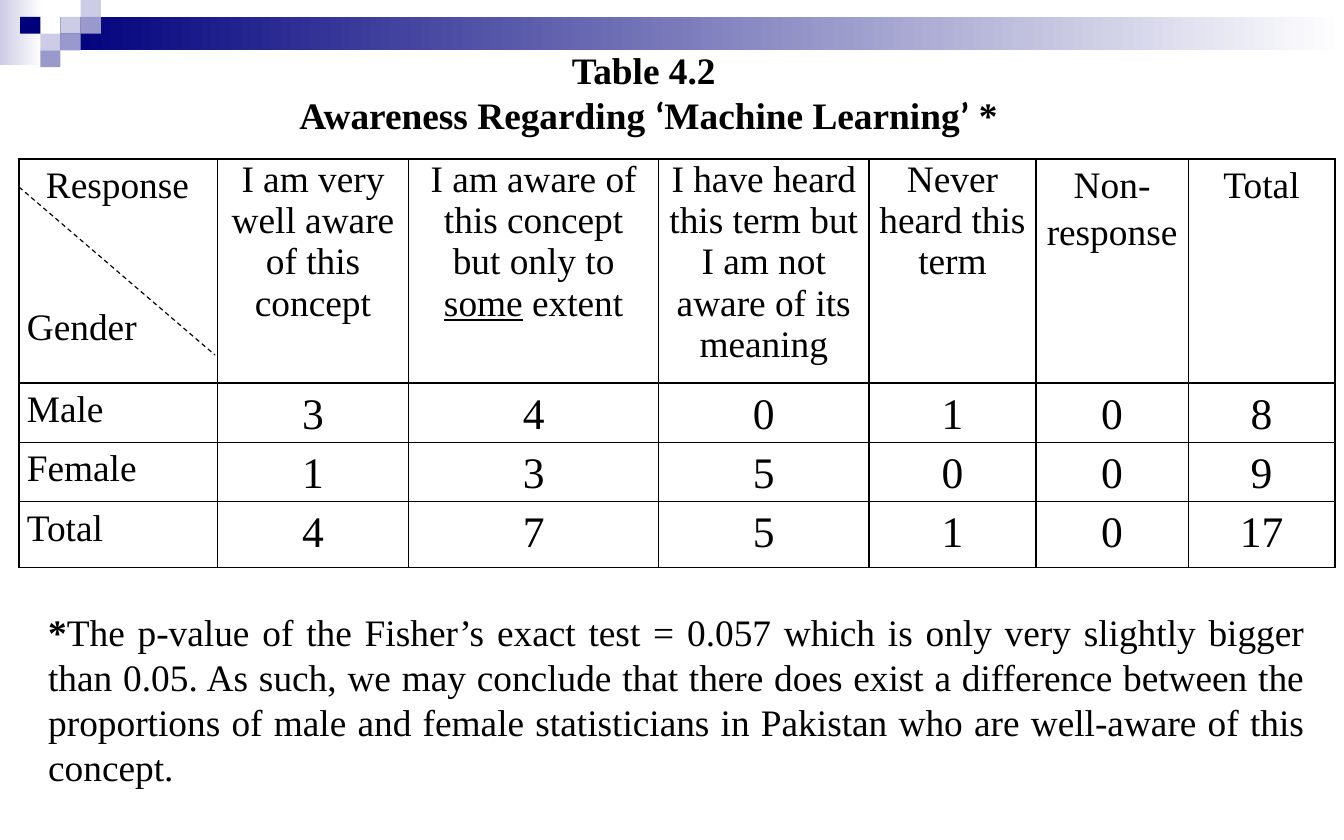
from dataclasses import dataclass, field

from lxml.etree import SubElement
from pptx import Presentation
from pptx.dml.color import RGBColor
from pptx.enum.dml import MSO_LINE
from pptx.enum.shapes import MSO_CONNECTOR, MSO_SHAPE
from pptx.enum.text import MSO_ANCHOR, MSO_AUTO_SIZE, PP_ALIGN
from pptx.oxml.ns import qn
from pptx.util import Inches, Pt

COLORS = {"ink": "000000", "navy": "00007D", "mid": "9999CC", "pale": "CCCCE6", "white": "FFFFFF"}
SERIF, SANS = "Times New Roman", "Calibri"
WIDTH, HEIGHT = 12, 7.5
COL, ROW = 0.18, 0.15
LEFT, TOP = 0.17, 1.42
COL_WIDTHS = [1.77, 1.71, 2.23, 1.88, 1.49, 1.36, 1.31]
ROW_HEIGHTS = [2, 0.53, 0.53, 0.59]
LOOSE = 1.15


@dataclass
class Block:
    col: float
    row: float
    cols: float
    rows: float
    color: str
    fade: bool = False


@dataclass
class Run:
    text: str
    font: dict = field(default_factory=dict)


@dataclass
class Para:
    runs: list[Run]
    fmt: dict = field(default_factory=dict)
    size: int = 24
    indent: float = 0


BLOCKS = [
    Block(0, 0, 2.1, 3.9, "pale", True),
    Block(3, 1, WIDTH / COL - 3, 2, "navy", True),
    Block(3, 1, 1, 1, "pale"),
    Block(4, 0, 1, 1, "pale"),
    Block(4, 1, 1, 1, "mid"),
    Block(2, 2, 1, 1, "pale"),
    Block(1, 1, 1, 1, "navy"),
    Block(3, 2, 1, 1, "mid"),
    Block(2, 3, 1, 1, "mid"),
]
CENTER = {"alignment": PP_ALIGN.CENTER}
CENTER_LOOSE = CENTER | {"line_spacing": LOOSE}
JUSTIFY = {"alignment": PP_ALIGN.JUSTIFY}
BOLD = {"bold": True}
HEADERS = [
    ([Run("I am very well aware of this concept")], CENTER),
    ([Run("I am aware of this concept but only to "), Run("some", {"underline": True}),
      Run(" extent")], CENTER),
    ([Run("I have heard this term but I am not aware of its meaning")], CENTER),
    ([Run("Never heard this term")], CENTER),
    ([Run("Non-response")], CENTER_LOOSE),
    ([Run("Total")], CENTER_LOOSE),
]
COUNTS = {
    "Male": [3, 4, 0, 1, 0, 8],
    "Female": [1, 3, 5, 0, 0, 9],
    "Total": [4, 7, 5, 1, 0, 17],
}


def rgb(name: str) -> RGBColor:
    return RGBColor.from_string(COLORS[name])


def apply(target, values: dict) -> None:
    for name, value in values.items():
        setattr(target, name, value)


def write(tf, paras: list[Para]) -> None:
    for i, para in enumerate(paras):
        p = tf.add_paragraph() if i else tf.paragraphs[0]
        base = {"space_before": Pt(0), "space_after": Pt(0), "line_spacing": 1.0}
        apply(p, base | para.fmt)
        pPr = p._p.get_or_add_pPr()
        pPr.set("marL", str(Inches(para.indent)))
        pPr.set("indent", "0")
        SubElement(pPr, qn("a:buNone"))
        for run in para.runs:
            r = p.add_run()
            r.text = run.text
            apply(r.font, {"name": SERIF, "size": Pt(para.size), "bold": False} | run.font)
            r.font.color.rgb = rgb("ink")


def place(sp, left: float, top: float, width: float, height: float) -> None:
    apply(sp, {"left": Inches(left), "top": Inches(top),
               "width": Inches(width), "height": Inches(height)})


def add_block(s, block: Block) -> None:
    sp = s.shapes.add_shape(MSO_SHAPE.RECTANGLE, Inches(block.col * COL), Inches(block.row * ROW),
                            Inches(block.cols * COL), Inches(block.rows * ROW))
    sp.shadow.inherit = False
    sp.line.fill.background()
    if block.fade:
        sp.fill.gradient()
        sp.fill.gradient_angle = 0
        for stop, color in zip(sp.fill.gradient_stops, (block.color, "white")):
            stop.color.rgb = rgb(color)
    else:
        sp.fill.solid()
        sp.fill.fore_color.rgb = rgb(block.color)
    s.shapes.title.element.addprevious(sp.element)


def fill_cell(cell, paras: list[Para]) -> None:
    apply(cell, {"margin_left": Inches(0.07), "margin_right": Inches(0.07),
                 "margin_top": 0, "margin_bottom": 0})
    write(cell.text_frame, paras)
    tcPr = cell._tc.get_or_add_tcPr()
    for side in ("lnL", "lnR", "lnT", "lnB"):
        ln = SubElement(tcPr, qn(f"a:{side}"), w=str(Pt(1)))
        SubElement(SubElement(ln, qn("a:solidFill")), qn("a:srgbClr"), val=COLORS["ink"])
    cell.fill.background()


def add_counts(s) -> None:
    frame = s.shapes.add_table(len(ROW_HEIGHTS), len(COL_WIDTHS), Inches(LEFT), Inches(TOP),
                               Inches(sum(COL_WIDTHS)), Inches(sum(ROW_HEIGHTS)))
    table = frame.table
    apply(table, {"first_row": False, "horz_banding": False})
    for column, width in zip(table.columns, COL_WIDTHS):
        column.width = Inches(width)
    for row, height in zip(table.rows, ROW_HEIGHTS):
        row.height = Inches(height)
    loose = {"line_spacing": LOOSE}
    fill_cell(table.cell(0, 0), [
        Para([Run("Response")], loose, indent=0.17),
        Para([Run("Gender")], loose | {"space_before": Pt(61)}),
    ])
    for c, (runs, fmt) in enumerate(HEADERS, 1):
        fill_cell(table.cell(0, c), [Para(runs, fmt)])
    for r, (label, values) in enumerate(COUNTS.items(), 1):
        fill_cell(table.cell(r, 0), [Para([Run(label)], JUSTIFY | loose)])
        for c, value in enumerate(values, 1):
            fill_cell(table.cell(r, c), [Para([Run(str(value))], CENTER_LOOSE, 28)])


def add_diagonal(s) -> None:
    line = s.shapes.add_connector(MSO_CONNECTOR.STRAIGHT, Inches(LEFT), Inches(TOP + 0.25),
                                  Inches(LEFT + 1.75), Inches(TOP + 1.75))
    line.line.color.rgb = rgb("ink")
    apply(line.line, {"width": Pt(0.75), "dash_style": MSO_LINE.DASH})
    SubElement(line.element.spPr, qn("a:effectLst"))


def main() -> None:
    prs = Presentation()
    apply(prs, {"slide_width": Inches(WIDTH), "slide_height": Inches(HEIGHT)})
    s = prs.slides.add_slide(prs.slide_layouts[1])
    title, note = s.shapes.title, s.placeholders[1]
    for block in BLOCKS:
        add_block(s, block)

    frame = {"auto_size": MSO_AUTO_SIZE.NONE, "word_wrap": True}
    place(title, 2.33, 0.33, 6.92, 1.51)
    apply(title.text_frame, frame | {"vertical_anchor": MSO_ANCHOR.MIDDLE,
                                     "margin_bottom": Inches(0.58)})
    quote = BOLD | {"name": SANS}
    write(title.text_frame, [
        Para([Run("Table 4.2 ", BOLD)], CENTER),
        Para([Run("Awareness Regarding ", BOLD), Run("‘", quote), Run("Machine Learning", BOLD),
              Run("’", quote), Run(" *", BOLD)], CENTER),
    ])

    place(note, 0.33, 5.39, 11.42, 2.11)
    apply(note.text_frame, frame | {"vertical_anchor": MSO_ANCHOR.TOP})
    write(note.text_frame, [Para([
        Run("*", BOLD),
        Run("The p-value of the Fisher’s exact test = 0.057 which is only very slightly bigger "
            "than 0.05. As such, we may conclude that there does exist a difference between the "
            "proportions of male and female statisticians in Pakistan who are well-aware of this "
            "concept."),
    ], JUSTIFY)])

    add_counts(s)
    add_diagonal(s)
    prs.save("out.pptx")


if __name__ == "__main__":
    main()
